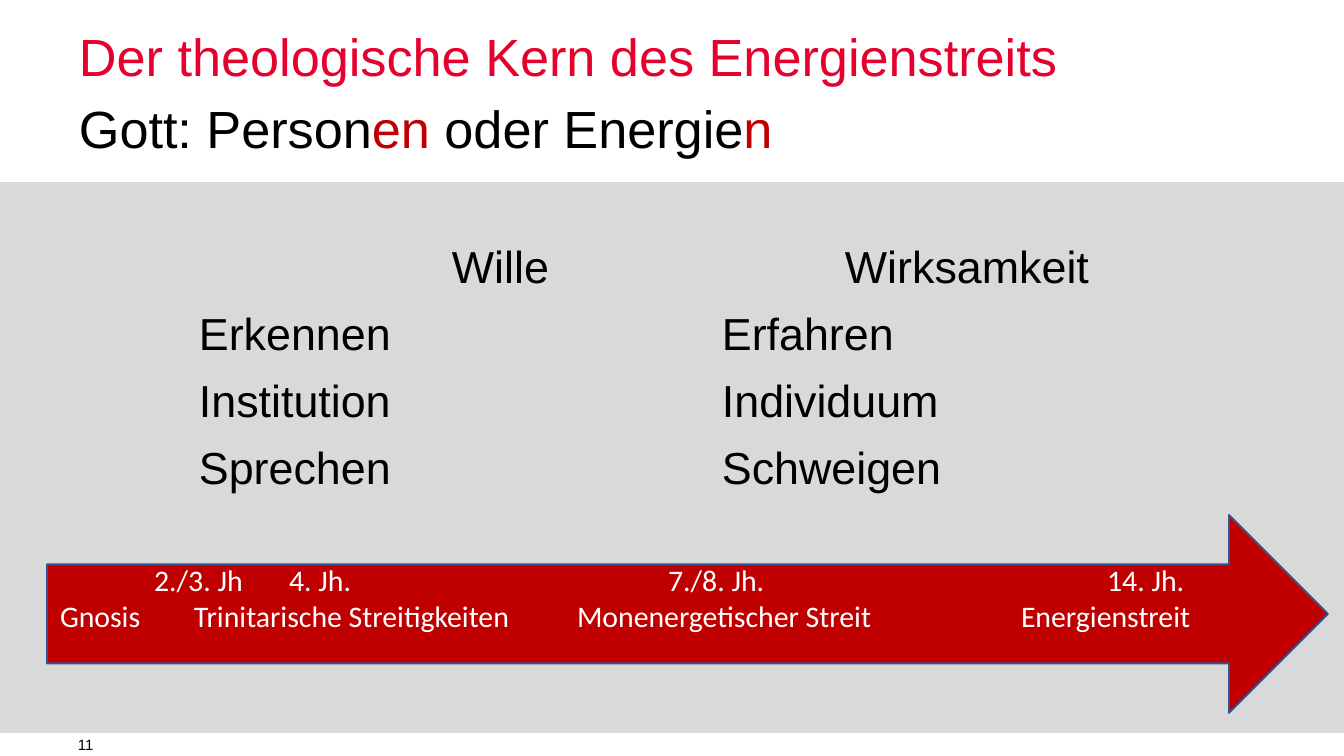
from dataclasses import dataclass

from lxml.etree import SubElement
from pptx import Presentation
from pptx.dml.color import RGBColor
from pptx.enum.shapes import MSO_SHAPE
from pptx.enum.text import MSO_ANCHOR
from pptx.oxml.ns import qn
from pptx.util import Pt


@dataclass(frozen=True)
class Theme:
    black: str = "000000"
    white: str = "FFFFFF"
    heading: str = "E6002E"
    accent: str = "C00000"
    panel: str = "D9D9D9"
    outline: str = "325491"
    font: str = "Arial"
    arrow_font: str = "Calibri"
    title_size: int = 28
    body_size: int = 24
    arrow_size: int = 16
    number_size: int = 8


THEME = Theme()
EMU_PER_PX = 914400 / 134.4

# Each row: text cells and the tab stops (px from the text edge) they start at
TERMS = [
    (("Wille", "Wirksamkeit"), (197, 590)),
    (("Erkennen", "Erfahren"), (199, 722)),
    (("Institution", "Individuum"), (199, 722)),
    (("Sprechen", "Schweigen"), (199, 722)),
]
DATES = ("2./3. Jh", "4. Jh.", "7./8. Jh.", "14. Jh.")
DISPUTES = ("Gnosis", "Trinitarische Streitigkeiten",
            "Monenergetischer Streit", "Energienstreit")


def px(length):
    return round(length * EMU_PER_PX)


def color(value):
    return RGBColor.from_string(value)


def set_frame(shape, anchor=MSO_ANCHOR.TOP, left=0, top=0, bottom=0):
    frame = shape.text_frame
    formats = {
        "word_wrap": True,
        "vertical_anchor": anchor,
        "margin_left": px(left),
        "margin_top": px(top),
        "margin_right": 0,
        "margin_bottom": px(bottom),
    }
    for name, value in formats.items():
        setattr(frame, name, value)
    return frame


def add_tab_stops(paragraph, stops):
    tab_list = SubElement(paragraph._p.get_or_add_pPr(), qn("a:tabLst"))
    for stop in stops:
        SubElement(tab_list, qn("a:tab"), pos=str(px(stop)), algn="l")


def add_paragraph(frame, index, spans, size, font=THEME.font, stops=(), **spacing):
    paragraph = frame.paragraphs[0] if index == 0 else frame.add_paragraph()
    for name, value in spacing.items():
        setattr(paragraph, name, value)
    if stops:
        add_tab_stops(paragraph, stops)
    for text, ink in spans:
        span = paragraph.add_run()
        span.text = text
        for name, value in {"name": font, "size": Pt(size)}.items():
            setattr(span.font, name, value)
        span.font.color.rgb = color(ink)


def add_text(page, area, spans, size, anchor=MSO_ANCHOR.TOP, **spacing):
    box = page.shapes.add_textbox(*map(px, area))
    add_paragraph(set_frame(box, anchor), 0, spans, size, **spacing)


def add_filled_shape(page, kind, area, fill, line=None):
    shape = page.shapes.add_shape(kind, *map(px, area))
    shape.shadow.inherit = False
    shape.fill.solid()
    shape.fill.fore_color.rgb = color(fill)
    if line:
        shape.line.color.rgb = color(line)
        shape.line.width = Pt(1)
    else:
        shape.line.fill.background()
    return shape


def add_term_panel(page):
    panel = add_filled_shape(page, MSO_SHAPE.RECTANGLE, (0, 182, 1344, 551), THEME.panel)
    frame = set_frame(panel, top=63)
    for index, (cells, stops) in enumerate(TERMS):
        text = "".join("\t" + cell for cell in cells)
        add_paragraph(frame, index, [(text, THEME.black)], THEME.body_size, stops=stops,
                      line_spacing=0.9, space_before=Pt(10 if index else 0))


def add_timeline(page):
    arrow = add_filled_shape(page, MSO_SHAPE.RIGHT_ARROW, (47, 515, 1281, 198),
                             THEME.accent, THEME.outline)
    frame = set_frame(arrow, MSO_ANCHOR.MIDDLE, left=13, bottom=33)
    rows = [(DATES, (135, 514, 953)), (DISPUTES, (134, 517, 961))]
    for index, (cells, stops) in enumerate(rows):
        add_paragraph(frame, index, [("\t".join(cells), THEME.white)], THEME.arrow_size,
                      font=THEME.arrow_font, stops=stops)


def main():
    deck = Presentation()
    deck.slide_width, deck.slide_height = px(1344), px(756)
    page = deck.slides.add_slide(deck.slide_layouts[6])

    # Page number
    add_text(page, (78, 733, 211, 23), [("11", THEME.black)], THEME.number_size,
             MSO_ANCHOR.MIDDLE)

    # Contrasting terms
    add_term_panel(page)

    # Heading and subheading
    add_text(page, (79, 99, 1032, 60),
             [("Gott: Person", THEME.black), ("en ", THEME.accent),
              ("oder Energie", THEME.black), ("n", THEME.accent)],
             THEME.title_size, line_spacing=Pt(32))
    add_text(page, (79, 27, 1032, 60),
             [("Der theologische Kern des Energienstreits", THEME.heading)],
             THEME.title_size, line_spacing=Pt(32))

    # Timeline of the disputes
    add_timeline(page)

    deck.save("out.pptx")


if __name__ == "__main__":
    main()
